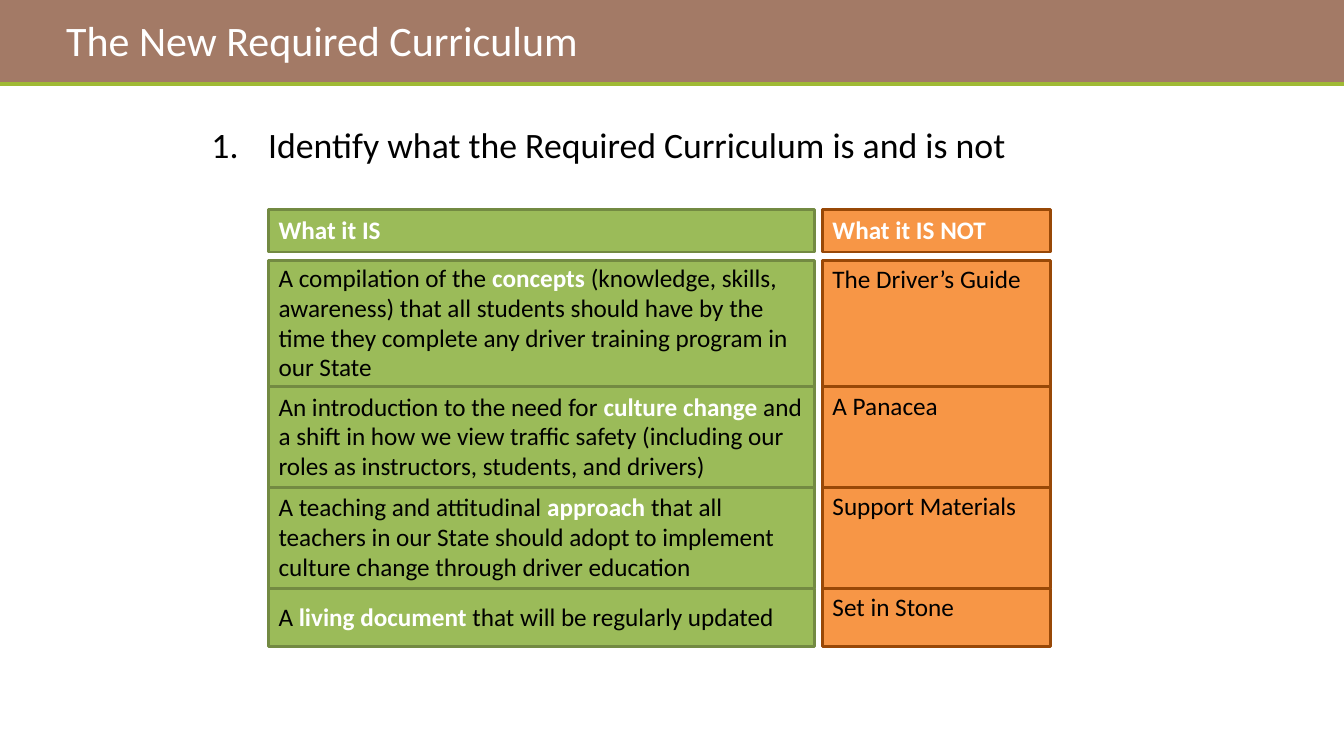
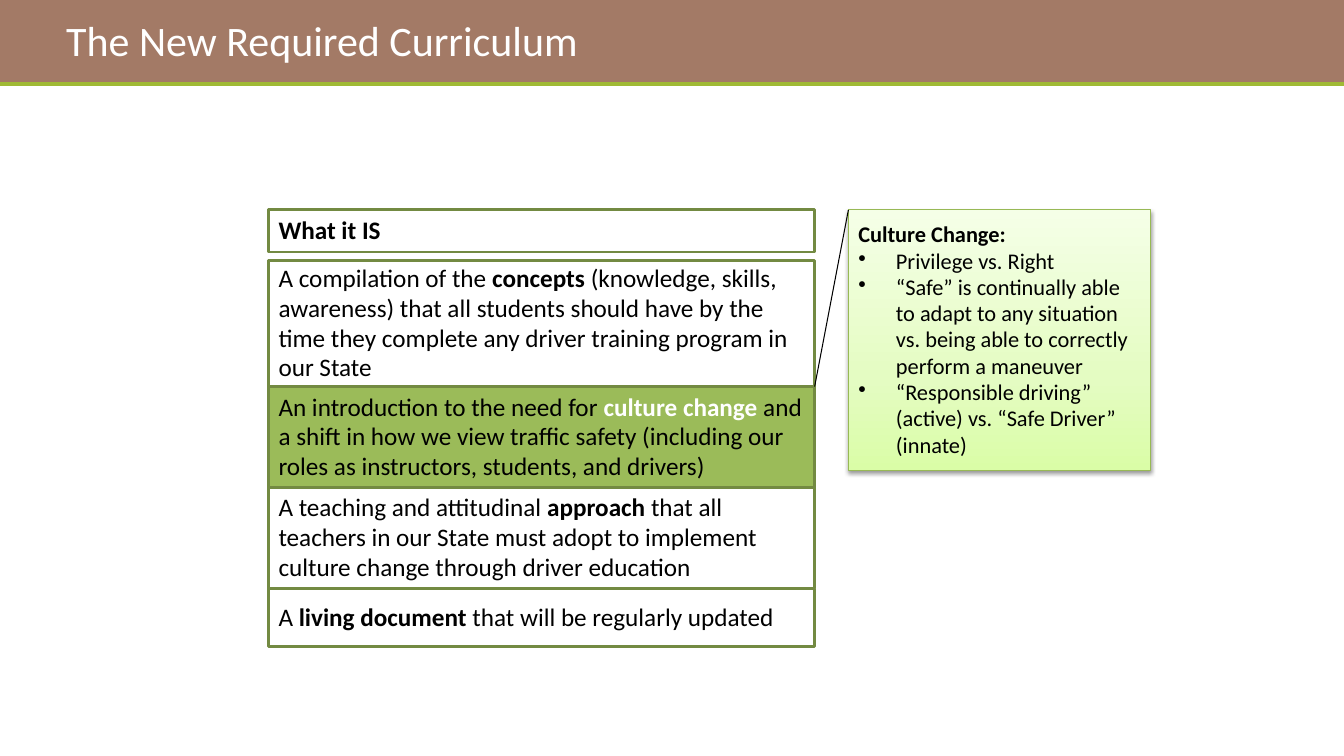
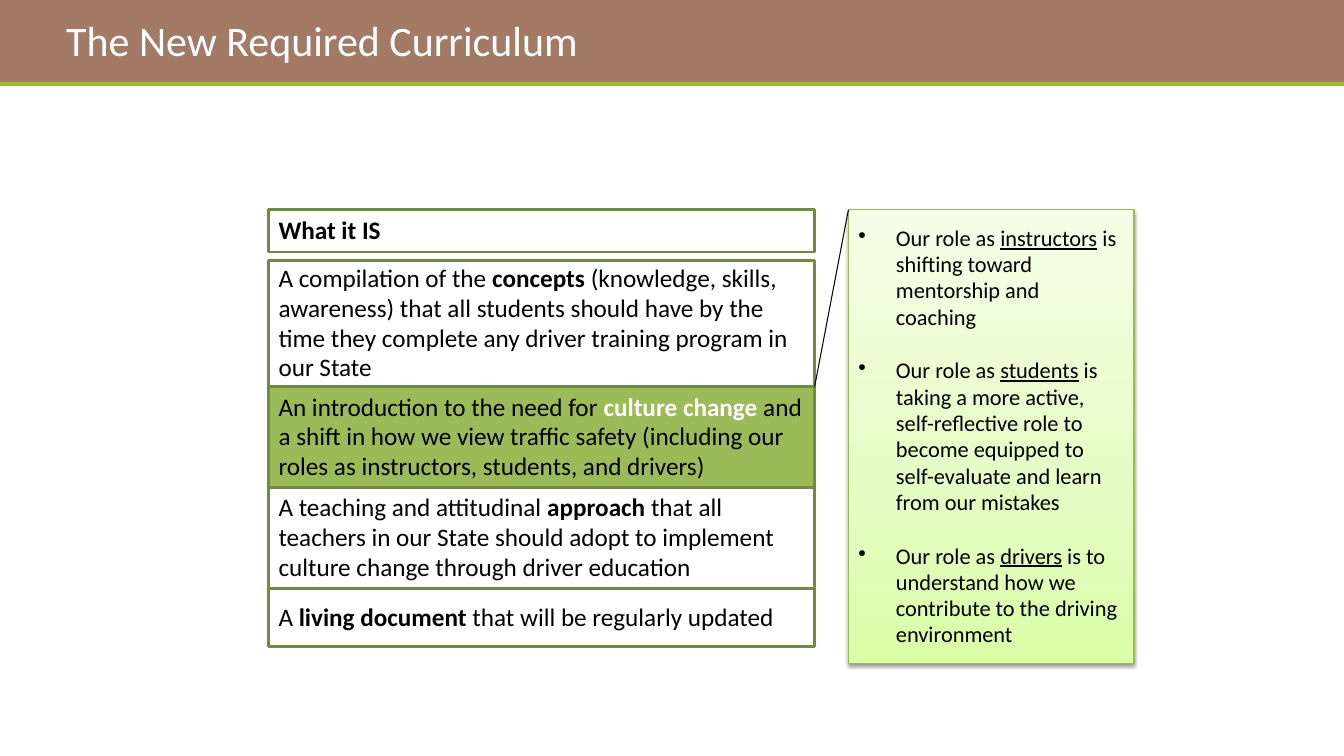
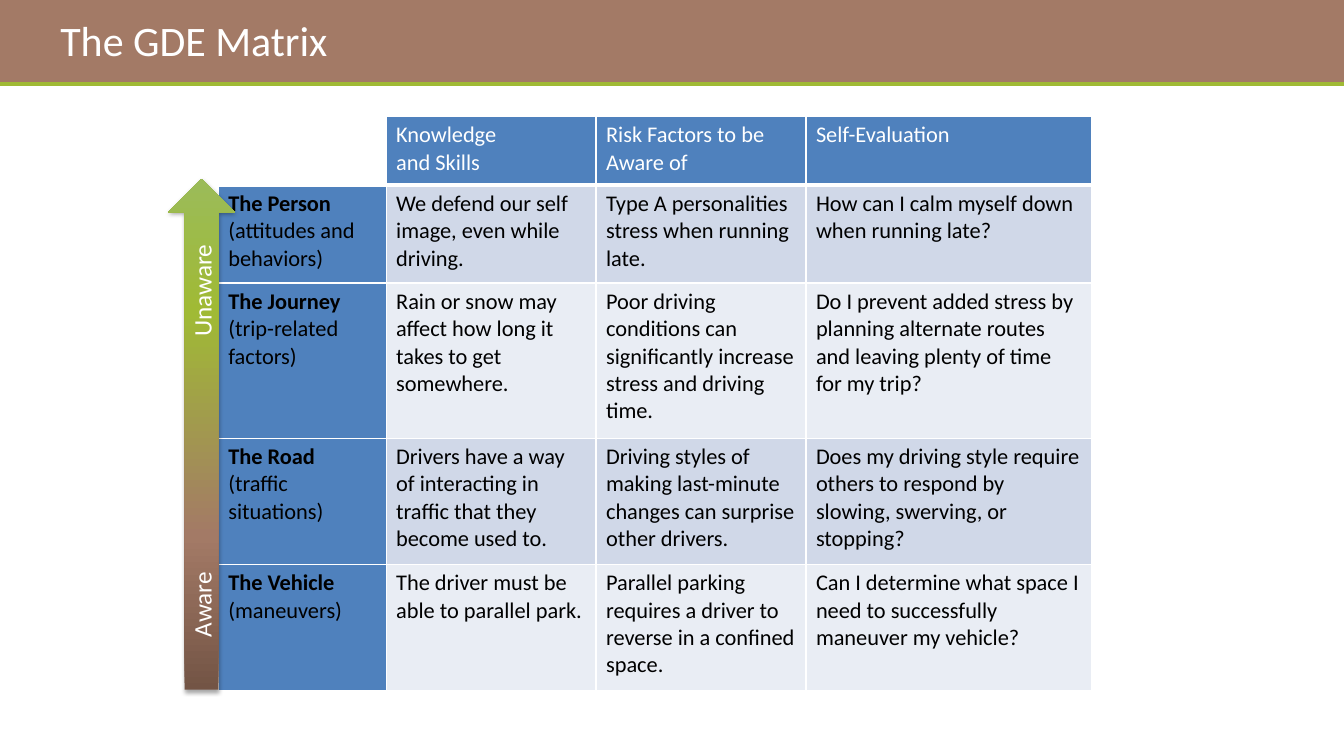
from itertools import accumulate

from pptx import Presentation
from pptx import util as u
from pptx.dml.color import RGBColor
from pptx.enum import shapes, text
from pptx.oxml import parse_xml
from pptx.oxml.ns import nsdecls

FONT = "Calibri"
COLORS = {
    "white": "FFFFFF", "black": "000000",
    "band": "A37A66", "band_rule": "A0BA35",
    "is": "9BBB59", "is_line": "738A42",
    "not": "F79646", "not_line": "984807",
    "note_line": "98B955",
    "head": "4F81BD", "odd_row": "D0D8E8", "even_row": "E9EDF4",
}
NOTE_STOPS = [(0, "DAFDA7"), (35, "E4FCC2"), (100, "F5FFE7")]
ARROW_STOPS = [(0, "735445"), (30, "A37A66"), (74, "A0BA35"), (100, "9BBB59")]

SLIDE_WIDTH, SLIDE_HEIGHT, BAND_HEIGHT = 33.87, 19.05, 2.12
TOP = 5.29
IS_LEFT, IS_WIDTH = 6.77, 13.76
NOT_LEFT, NOT_WIDTH = 20.73, 5.74
NOTE_LEFT = 21.38
HEADER_HEIGHT, HEADER_GAP = 1.06, 0.21
ROW_HEIGHTS = [3.18, 2.54, 2.54, 1.48]
HIGHLIGHTED_ROW = 1

# Text between asterisks is emphasised.
IS_ROWS = [
    "A compilation of the *concepts *(knowledge, skills, awareness) that all students "
    "should have by the time they complete any driver training program in our State",
    "An introduction to the need for *culture change *and a shift in how we view traffic "
    "safety (including our roles as instructors, students, and drivers)",
    "A teaching and attitudinal *approach* that all teachers in our State {verb} adopt to "
    "implement culture change through driver education",
    "A *living document *that will be regularly updated",
]
NOT_ROWS = ["The Driver’s Guide", "A Panacea", "Support Materials", "Set in Stone"]
CULTURE_NOTES = [
    "Privilege vs. Right",
    "“Safe” is continually able to adapt to any situation vs. being able to correctly "
    "perform a maneuver",
    "“Responsible driving” (active) vs. “Safe Driver” (innate)",
]
ROLE_NOTES = [
    "Our role as *instructors* is shifting toward mentorship and coaching",
    "Our role as *students* is taking a more active, self-reflective role to become "
    "equipped to self-evaluate and learn from our mistakes",
    "Our role as *drivers* is to understand how we contribute to the driving environment",
]
MATRIX = [
    ["", "Knowledge\nand Skills", "Risk Factors to be Aware of", "Self-Evaluation"],
    ["*The Person *(attitudes and behaviors)",
     "We defend our self image, even while driving.",
     "Type A personalities stress when running late.",
     "How can I calm myself down when running late?"],
    ["*The Journey *(trip-related factors)",
     "Rain or snow may affect how long it takes to get somewhere.",
     "Poor driving conditions can significantly increase stress and driving time.",
     "Do I prevent added stress by planning alternate routes and leaving plenty of time "
     "for my trip?"],
    ["*The Road *(traffic situations)",
     "Drivers have a way of interacting in traffic that they become used to.",
     "Driving styles of making last-minute changes can surprise other drivers.",
     "Does my driving style require others to respond by slowing, swerving, or stopping?"],
    ["*The Vehicle *(maneuvers)",
     "The driver must be able to parallel park.",
     "Parallel parking requires a driver to reverse in a confined space.",
     "Can I determine what space I need to successfully maneuver my vehicle?"],
]


def rgb(name):
    return RGBColor.from_string(COLORS[name])


def cm_box(*lengths):
    return [u.Cm(length) for length in lengths]


def write(paragraph, content, size, color="black", emphasis=None):
    """Fill a paragraph; parts between asterisks also get the emphasis values."""
    for index, part in enumerate(content.split("*")):
        values = {"name": FONT, "size": u.Pt(size), "bold": False, "color": color}
        if index % 2:
            values.update(emphasis or {"bold": True})
        for number, line in enumerate(part.split("\n")):
            if number:
                paragraph.add_line_break()
            if not line:
                continue
            run = paragraph.add_run()
            run.text = line
            for name, value in values.items():
                if name == "color":
                    run.font.color.rgb = rgb(value)
                else:
                    setattr(run.font, name, value)


def add_list_mark(paragraph, mark, indent):
    properties = paragraph._p.get_or_add_pPr()
    properties.set("marL", str(u.Cm(indent)))
    properties.set("indent", str(-u.Cm(indent)))
    properties.append(parse_xml(mark.format(ns=nsdecls("a"))))


def add_box(slide, box, fill=None, line=None, weight=2, anchor="MIDDLE",
            kind=shapes.MSO_SHAPE.RECTANGLE):
    shape = slide.shapes.add_shape(kind, *cm_box(*box))
    shape.shadow.inherit = False
    if fill:
        shape.fill.solid()
        shape.fill.fore_color.rgb = rgb(fill)
    else:
        shape.fill.background()
    if line:
        shape.line.color.rgb = rgb(line)
        shape.line.width = u.Pt(weight)
    else:
        shape.line.fill.background()
    shape.text_frame.word_wrap = True
    shape.text_frame.vertical_anchor = text.MSO_ANCHOR[anchor]
    shape.text_frame.paragraphs[0].alignment = text.PP_ALIGN.LEFT
    return shape


def add_textbox(slide, box, anchor="TOP"):
    frame = slide.shapes.add_textbox(*cm_box(*box)).text_frame
    frame.word_wrap = True
    frame.vertical_anchor = text.MSO_ANCHOR[anchor]
    return frame.paragraphs[0]


def add_line(slide, start, end, color, weight):
    line = slide.shapes.add_connector(shapes.MSO_CONNECTOR.STRAIGHT, *cm_box(*start, *end))
    line.line.color.rgb = rgb(color)
    line.line.width = u.Pt(weight)
    line._element.spPr.append(parse_xml(f"<a:effectLst {nsdecls('a')}/>"))


def add_gradient_and_shadow(shape, stops, angle, opacity, distance):
    """Give the shape a linear gradient and a soft shadow straight below it."""
    properties = shape._element.spPr
    marks = "".join(f'<a:gs pos="{place * 1000}"><a:srgbClr val="{color}"/></a:gs>'
                    for place, color in stops)
    gradient = parse_xml(
        f'<a:gradFill {nsdecls("a")} rotWithShape="1"><a:gsLst>{marks}</a:gsLst>'
        f'<a:lin ang="{angle * 60000}" scaled="0"/></a:gradFill>')
    properties.replace(properties.find("{*}noFill"), gradient)
    properties.find("{*}effectLst").append(parse_xml(
        f'<a:outerShdw {nsdecls("a")} blurRad="{u.Pt(3.1)}" dist="{u.Pt(distance)}" '
        f'dir="5400000" rotWithShape="0"><a:srgbClr val="{COLORS["black"]}">'
        f'<a:alpha val="{opacity * 1000}"/></a:srgbClr></a:outerShdw>'))


def new_slide(presentation, title, title_left=1.42):
    slide = presentation.slides.add_slide(presentation.slide_layouts[6])
    add_box(slide, (0, 0, SLIDE_WIDTH, BAND_HEIGHT), "band")
    add_line(slide, (0, BAND_HEIGHT), (SLIDE_WIDTH, BAND_HEIGHT), "band_rule", 3)
    write(add_textbox(slide, (title_left, 0.43, 23.14, 1.14), "MIDDLE"), title, 30, "white")
    return slide


def add_column(slide, left, top, width, header, rows, color, anchor="MIDDLE", filled=None):
    """Stack a header and its rows; only the filled row is coloured, or all if None."""
    row_tops = accumulate(ROW_HEIGHTS[:-1], initial=top + HEADER_HEIGHT + HEADER_GAP)
    cells = [(None, top, HEADER_HEIGHT, f"*{header}*", "MIDDLE")]
    cells += [(index, row_top, height, content, anchor) for index, (row_top, height, content)
              in enumerate(zip(row_tops, ROW_HEIGHTS, rows))]
    for index, cell_top, height, content, cell_anchor in cells:
        colored = filled is None or index == filled
        shape = add_box(slide, (left, cell_top, width, height), color if colored else None,
                        color + "_line", anchor=cell_anchor)
        paragraph = shape.text_frame.paragraphs[0]
        paragraph.line_spacing = 0.98
        write(paragraph, content, 18,
              emphasis={"bold": True, "color": "white" if colored else "black"})


def add_is_column(slide, verb="should", filled=None):
    rows = [row.format(verb=verb) for row in IS_ROWS]
    add_column(slide, IS_LEFT, TOP, IS_WIDTH, "What it IS", rows, "is", filled=filled)


def add_note(slide, left, top, width, height, notes, heading=None, gap=0, emphasis=None):
    shape = add_box(slide, (left, top, width, height), line="note_line", weight=0.75)
    add_gradient_and_shadow(shape, NOTE_STOPS, 270, 38, 1.6)
    frame = shape.text_frame
    lines = ([f"*{heading}*"] if heading else []) + notes
    for index, content in enumerate(lines):
        paragraph = frame.add_paragraph() if index else frame.paragraphs[0]
        paragraph.alignment = text.PP_ALIGN.LEFT
        paragraph.line_spacing = 0.98
        if index and gap:
            paragraph.space_before = u.Pt(gap)
        if index or not heading:
            add_list_mark(paragraph, '<a:buChar {ns} char="•"/>', 0.95)
        write(paragraph, content, 16, emphasis=emphasis)
    row_top = TOP + HEADER_HEIGHT + HEADER_GAP + sum(ROW_HEIGHTS[:HIGHLIGHTED_ROW])
    add_line(slide, (left, top), (IS_LEFT + IS_WIDTH, row_top), "black", 0.75)


def set_borders(cell, bottom):
    properties = cell._tc.get_or_add_tcPr()
    for side, weight in {"L": 1, "R": 1, "T": 1, "B": bottom}.items():
        properties.append(parse_xml(
            f'<a:ln{side} {nsdecls("a")} w="{u.Pt(weight)}"><a:solidFill>'
            f'<a:srgbClr val="{COLORS["white"]}"/></a:solidFill></a:ln{side}>'))


def add_matrix(slide, left, top, widths, heights):
    table = slide.shapes.add_table(len(heights), len(widths), *cm_box(
        left, top, sum(widths), sum(heights))).table
    for column, width in zip(table.columns, widths):
        column.width = u.Cm(width)
    for row, height in zip(table.rows, heights):
        row.height = u.Cm(height)
    for i, contents in enumerate(MATRIX):
        for j, content in enumerate(contents):
            cell = table.cell(i, j)
            set_borders(cell, 1 if i else 3)
            if i == j == 0:
                fill = "white"
            elif i == 0 or j == 0:
                fill = "head"
            else:
                fill = "odd_row" if i % 2 else "even_row"
            cell.fill.solid()
            cell.fill.fore_color.rgb = rgb(fill)
            write(cell.text_frame.paragraphs[0], content, 16, "black" if i else "white")


def add_awareness_arrow(slide, left, top, width, height):
    """Draw an upward arrow, a right arrow turned, inside the given upright box."""
    shift = (height - width) / 2
    arrow = add_box(slide, (left - shift, top + shift, height, width),
                    kind=shapes.MSO_SHAPE.RIGHT_ARROW)
    arrow.rotation = 270
    add_gradient_and_shadow(arrow, ARROW_STOPS, 0, 35, 1.8)
    arrow.text_frame.margin_left = u.Cm(1.32)
    paragraph = arrow.text_frame.paragraphs[0]
    paragraph._p.get_or_add_pPr().append(parse_xml(
        f'<a:tabLst {nsdecls("a")}><a:tab pos="{u.Cm(7.57)}" algn="l"/></a:tabLst>'))
    write(paragraph, "Aware\tUnaware", 18, "white")


def is_and_is_not_slide(presentation, title):
    slide = new_slide(presentation, title)
    task = add_textbox(slide, (5.08, 2.96, 22.86, 2.12))
    add_list_mark(task, '<a:buAutoNum {ns} type="arabicPeriod"/>', 1.43)
    write(task, "Identify what the Required Curriculum is and is not", 25.5)
    add_is_column(slide)
    add_column(slide, NOT_LEFT, TOP, NOT_WIDTH, "What it IS NOT", NOT_ROWS, "not", "TOP")


def highlight_slide(presentation, title, verb, note_size, notes, **note_format):
    slide = new_slide(presentation, title)
    add_is_column(slide, verb, HIGHLIGHTED_ROW)
    add_note(slide, NOTE_LEFT, TOP, *note_size, notes, **note_format)


def matrix_slide(presentation):
    slide = new_slide(presentation, "The GDE Matrix", 1.27)
    add_matrix(slide, 5.5, 2.93, [4.23, 5.29, 5.29, 7.2], [1.73, 2.47, 3.91, 3.18, 3.18])
    add_awareness_arrow(slide, 4.23, 4.5, 1.7, 12.88)


def main():
    presentation = Presentation()
    presentation.slide_width = u.Cm(SLIDE_WIDTH)
    presentation.slide_height = u.Cm(SLIDE_HEIGHT)
    title = "The New Required Curriculum"
    is_and_is_not_slide(presentation, title)
    highlight_slide(presentation, title, "must", (7.62, 6.56), CULTURE_NOTES,
                    heading="Culture Change:")
    highlight_slide(presentation, title, "should", (7.2, 11.43), ROLE_NOTES,
                    gap=19.5, emphasis={"underline": True})
    matrix_slide(presentation)
    presentation.save("out.pptx")


if __name__ == "__main__":
    main()
